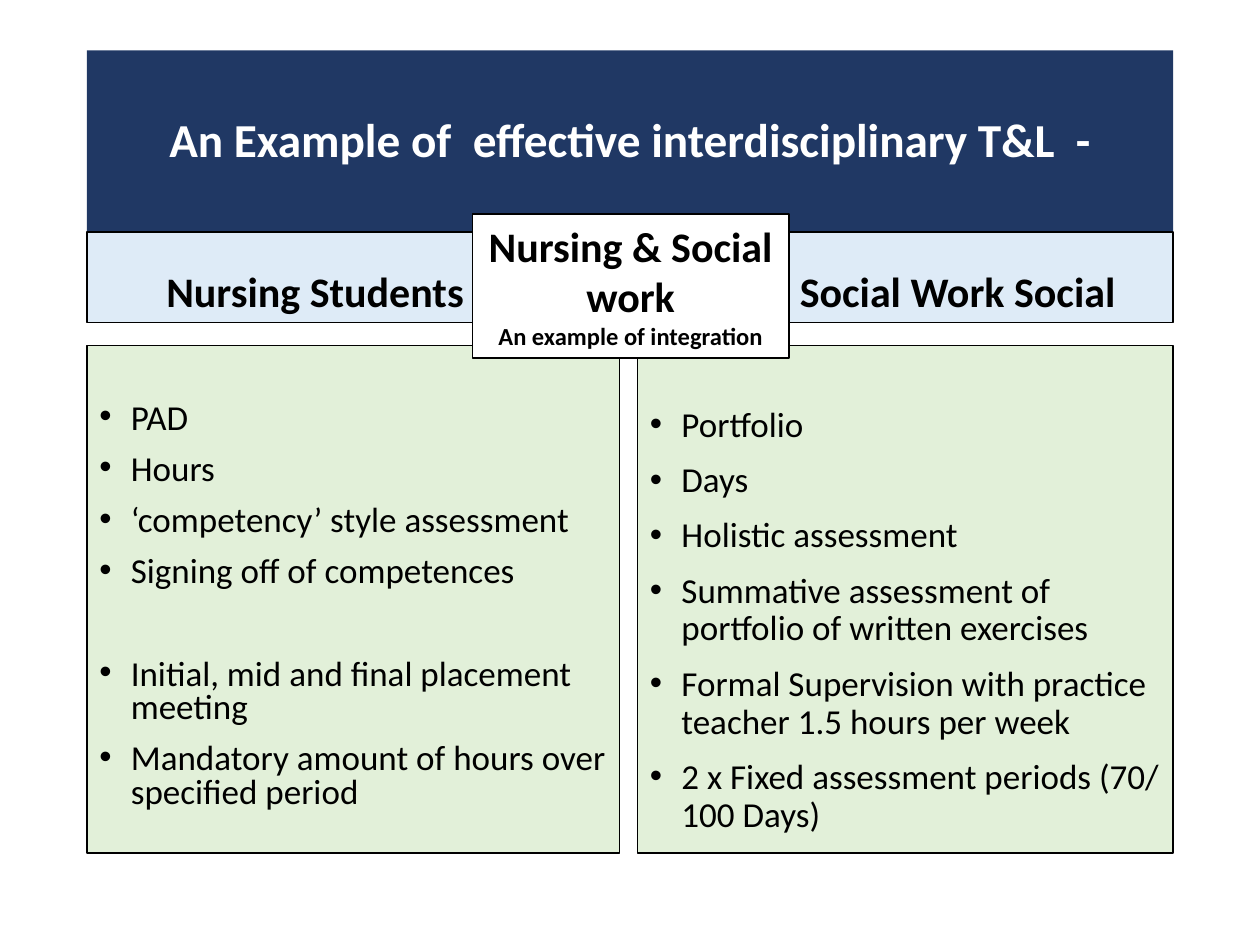
import pptx
import pptx.util
import pptx.dml.color
import pptx.enum.shapes
import pptx.enum.text
from lxml import etree

Inches = pptx.util.Inches
Pt = pptx.util.Pt
ALIGN = pptx.enum.text.PP_ALIGN
ANCHOR = pptx.enum.text.MSO_ANCHOR
FIT = pptx.enum.text.MSO_AUTO_SIZE

COLORS = {
    "navy": "203864",
    "blue": "DEEBF7",
    "green": "E2F0D9",
    "white": "FFFFFF",
    "black": "000000",
}
FONT = "Calibri"
HEADER_HEIGHT = 0.72
LIST_OFFSET = 0.9

NURSING = [
    "PAD",
    "Hours",
    "‘competency’ style assessment",
    "Signing off of competences",
    "Initial, mid and final placement meeting",
    "Mandatory amount of hours over specified period",
]
SOCIAL_WORK = [
    "Portfolio",
    "Days",
    "Holistic assessment",
    "Summative assessment of portfolio of written exercises",
    "Formal Supervision with practice teacher 1.5 hours per week",
    "2 x Fixed assessment periods (70/ 100 Days)",
]


def rgb(name):
    return pptx.dml.color.RGBColor.from_string(COLORS[name])


def fill_with(shape, color):
    shape.fill.solid()
    shape.fill.fore_color.rgb = rgb(color)


def style(paragraph, size, color="black", bold=False, align=ALIGN.LEFT, spacing=None):
    paragraph.alignment = align
    paragraph.line_spacing = spacing
    font = paragraph.font
    font.name, font.size, font.bold = FONT, Pt(size), bold
    font.color.rgb = rgb(color)


def add_panel(slide, left, top, width, height, color, anchor, line_width=0.75):
    panel = slide.shapes.add_shape(
        pptx.enum.shapes.MSO_SHAPE.RECTANGLE,
        Inches(left), Inches(top), Inches(width), Inches(height))
    panel.shadow.inherit = False
    fill_with(panel, color)
    panel.line.color.rgb = rgb("black")
    panel.line.width = Pt(line_width)
    panel.text_frame.word_wrap = True
    panel.text_frame.vertical_anchor = anchor
    return panel


def add_bullet(paragraph):
    properties = paragraph._p.get_or_add_pPr()
    properties.set("marL", str(Inches(0.25)))
    properties.set("indent", str(-Inches(0.25)))
    namespace = pptx.oxml.ns.qn("a:buFont"), pptx.oxml.ns.qn("a:buChar")
    etree.SubElement(properties, namespace[0], typeface="Arial")
    etree.SubElement(properties, namespace[1], char="•")


def place_title(slide, left, top, width, height):
    title = slide.shapes.title
    title.left, title.top = Inches(left), Inches(top)
    title.width, title.height = Inches(width), Inches(height)
    fill_with(title, "navy")
    frame = title.text_frame
    frame.text = "An Example of  effective interdisciplinary T&L  -"
    frame.auto_size = FIT.NONE
    frame.vertical_anchor = ANCHOR.MIDDLE
    style(frame.paragraphs[0], 27, "white", True, ALIGN.CENTER, 0.9)


def add_column(slide, left, top, width, height, heading, heading_inset, align,
               items, spacing, list_inset, breaks=()):
    header = add_panel(slide, left, top, width, HEADER_HEIGHT, "blue", ANCHOR.BOTTOM)
    header.text_frame.margin_left = Inches(heading_inset)
    header.text_frame.text = heading
    style(header.text_frame.paragraphs[0], 24, bold=True, align=align, spacing=0.9)

    body = add_panel(slide, left, top + LIST_OFFSET, width, height - LIST_OFFSET,
                     "green", ANCHOR.TOP)
    frame = body.text_frame
    frame.margin_top = Inches(list_inset)
    frame.text = "\n".join(items)
    for item, paragraph in zip(items, frame.paragraphs):
        style(paragraph, 20, spacing=spacing)
        paragraph.space_before = Pt(39.5 if item in breaks else 10)
        add_bullet(paragraph)


def add_integration_label(slide, left, top, width, height):
    label = add_panel(slide, left, top, width, height, "white", ANCHOR.TOP, 1)
    frame = label.text_frame
    frame.auto_size = FIT.SHAPE_TO_FIT_TEXT
    frame.text = "Nursing & Social work\nAn example of integration"
    for paragraph, size in zip(frame.paragraphs, (24, 14)):
        style(paragraph, size, bold=True, align=ALIGN.CENTER)


def main():
    deck = pptx.Presentation()
    deck.slide_width, deck.slide_height = Inches(10), Inches(7.5)
    slide = deck.slides.add_slide(deck.slide_layouts[5])
    place_title(slide, 0.69, 0.4, 8.62, 1.45)
    add_column(slide, 0.69, 1.84, 4.23, 4.93, "Nursing Students", 0.63, ALIGN.LEFT,
               NURSING, 0.8, 0.46, breaks=NURSING[4:5])
    add_column(slide, 5.06, 1.84, 4.25, 4.93, "Social Work Social", 0.93, ALIGN.CENTER,
               SOCIAL_WORK, 0.9, 0.49)
    add_integration_label(slide, 3.75, 1.7, 2.51, 1.14)
    deck.save("out.pptx")


if __name__ == "__main__":
    main()
